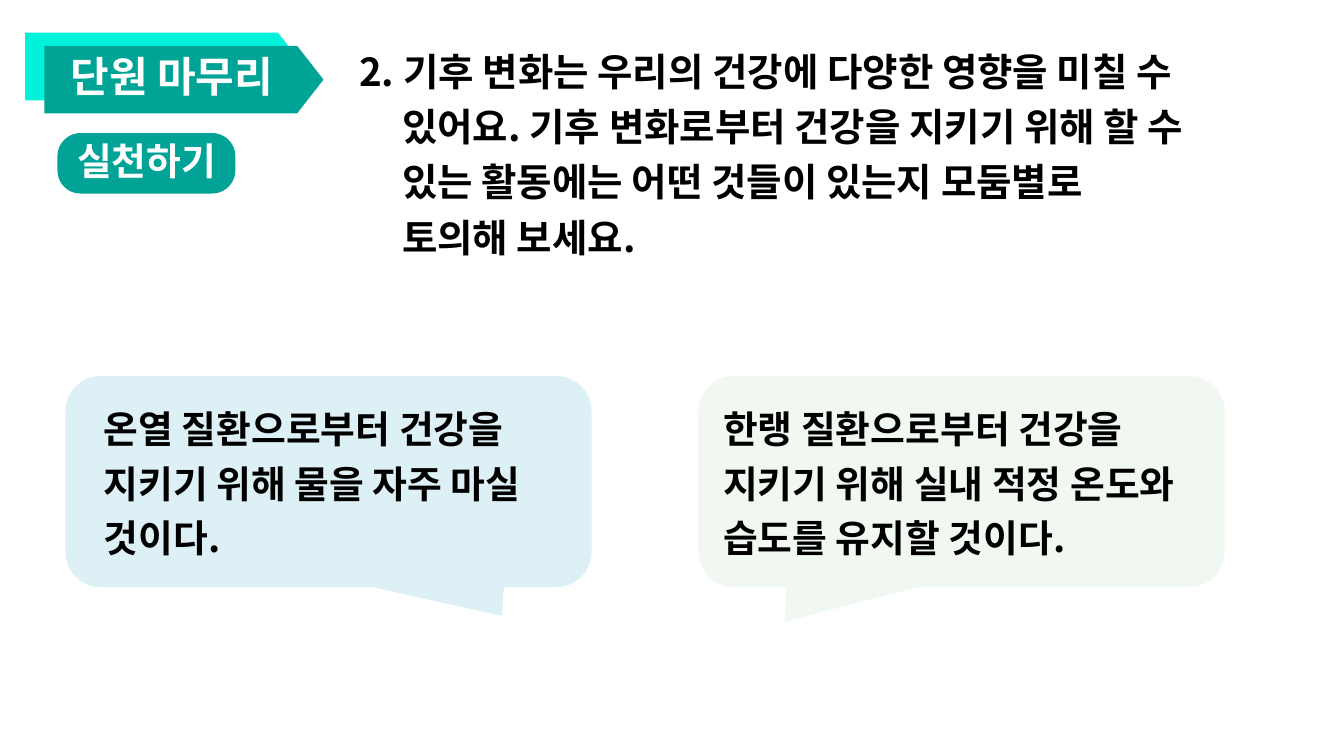
from lxml import etree
from pptx import Presentation
from pptx.dml.color import RGBColor
from pptx.enum.shapes import MSO_SHAPE
from pptx.enum.text import MSO_ANCHOR, MSO_AUTO_SIZE, PP_ALIGN
from pptx.oxml.ns import qn
from pptx.util import Inches, Pt

TAG = MSO_SHAPE.PENTAGON
PILL = MSO_SHAPE.ROUNDED_RECTANGLE
BUBBLE = MSO_SHAPE.ROUNDED_RECTANGULAR_CALLOUT
TOP, MIDDLE = MSO_ANCHOR.TOP, MSO_ANCHOR.MIDDLE
LEFT, CENTER = PP_ALIGN.LEFT, PP_ALIGN.CENTER
NO_FIT = MSO_AUTO_SIZE.NONE

WIDTH, HEIGHT = 26.67, 15
FONT = "Noto Sans CJK KR"
COLORS = {
    "teal": "00A496", "pill": "00A396", "aqua": "00F2DB",
    "blue": "DDF0F5", "green": "F1F8F1",
    "white": "FFFFFF", "black": "000000",
}
BUBBLE_TOP, BUBBLE_W, BUBBLE_H = 7.46, 10.44, 4.19
BUBBLE_LEFT, BUBBLE_STEP = 1.3, 12.56
HANG = 0.85

QUESTION = [
    "2. 기후 변화는 우리의 건강에 다양한 영향을 미칠 수",
    "있어요. 기후 변화로부터 건강을 지키기 위해 할 수",
    "있는 활동에는 어떤 것들이 있는지 모둠별로",
    "토의해 보세요.",
]
ANSWERS = [
    ("온열 질환으로부터 건강을 지키기 위해 물을 자주 마실 것이다.",
     "blue", (0.329, 0.635, 0.167), 0.66, 9.12),
    ("한랭 질환으로부터 건강을 지키기 위해 실내 적정 온도와 습도를 유지할 것이다.",
     "green", (-0.336, 0.663, 0.167), 0.39, 9.65),
]


def rgb(name):
    return RGBColor.from_string(COLORS[name])


def place(sp, x, y, w, h):
    sp.left, sp.top = Inches(x), Inches(y)
    sp.width, sp.height = Inches(w), Inches(h)


def add_shape(s, kind, box, color, adjustments):
    sp = s.shapes.add_shape(kind, *map(Inches, box))
    sp.shadow.inherit = False
    sp.fill.solid()
    sp.fill.fore_color.rgb = rgb(color)
    sp.line.fill.background()
    for i, value in enumerate(adjustments):
        sp.adjustments[i] = value


def write(tf, lines, size, color, spacing, align=LEFT, anchor=TOP, wrap=True):
    tf.word_wrap = wrap
    tf.auto_size = NO_FIT
    tf.vertical_anchor = anchor
    for i, line in enumerate(lines):
        p = tf.paragraphs[0] if i == 0 else tf.add_paragraph()
        p.text = line
        p.alignment = align
        p.line_spacing = spacing
        p.font.size = Pt(size)
        p.font.bold = True
        p.font.color.rgb = rgb(color)
        p.font.name = FONT
        props = p.font._element
        etree.SubElement(props, qn("a:ea")).set("typeface", FONT)


def add_text(s, box, text, size, color, spacing, **options):
    sp = s.shapes.add_textbox(*map(Inches, box))
    write(sp.text_frame, [text], size, color, spacing, **options)


def add_question(s):
    title = s.shapes.title
    place(title, 7.03, 0.71, 17.26, 4.45)
    write(title.text_frame, QUESTION, 55, "black", 1.2)
    for i, p in enumerate(title.text_frame.paragraphs):
        props = p._p.get_or_add_pPr()
        props.set("marL", str(Inches(HANG)))
        props.set("indent", str(-Inches(HANG) if i == 0 else 0))


def add_labels(s):
    for x, y, color in ((0.5, 0.65, "aqua"), (0.88, 0.91, "teal")):
        add_shape(s, TAG, (x, y, 5.54, 1.34), color, [0.391])
    add_text(s, (1.3, 1.07, 4.41, 1.01), "단원 마무리", 60, "white", 0.9)
    add_shape(s, PILL, (1.14, 2.64, 3.53, 1.2), "pill", [0.383])
    add_text(s, (1.43, 2.77, 2.96, 0.93), "실천하기", 54, "white", 0.9,
             align=CENTER, anchor=MIDDLE, wrap=False)


def add_answers(s):
    for i, (text, color, tail, inset, width) in enumerate(ANSWERS):
        x = BUBBLE_LEFT + i * BUBBLE_STEP
        add_shape(s, BUBBLE, (x, BUBBLE_TOP, BUBBLE_W, BUBBLE_H), color, tail)
        add_text(s, (x + inset, BUBBLE_TOP + 0.37, width, 3.37),
                 text, 54, "black", 1.2)


def main():
    prs = Presentation()
    prs.slide_width, prs.slide_height = Inches(WIDTH), Inches(HEIGHT)
    s = prs.slides.add_slide(prs.slide_layouts[5])
    add_question(s)
    add_labels(s)
    add_answers(s)
    prs.save("out.pptx")


if __name__ == "__main__":
    main()
